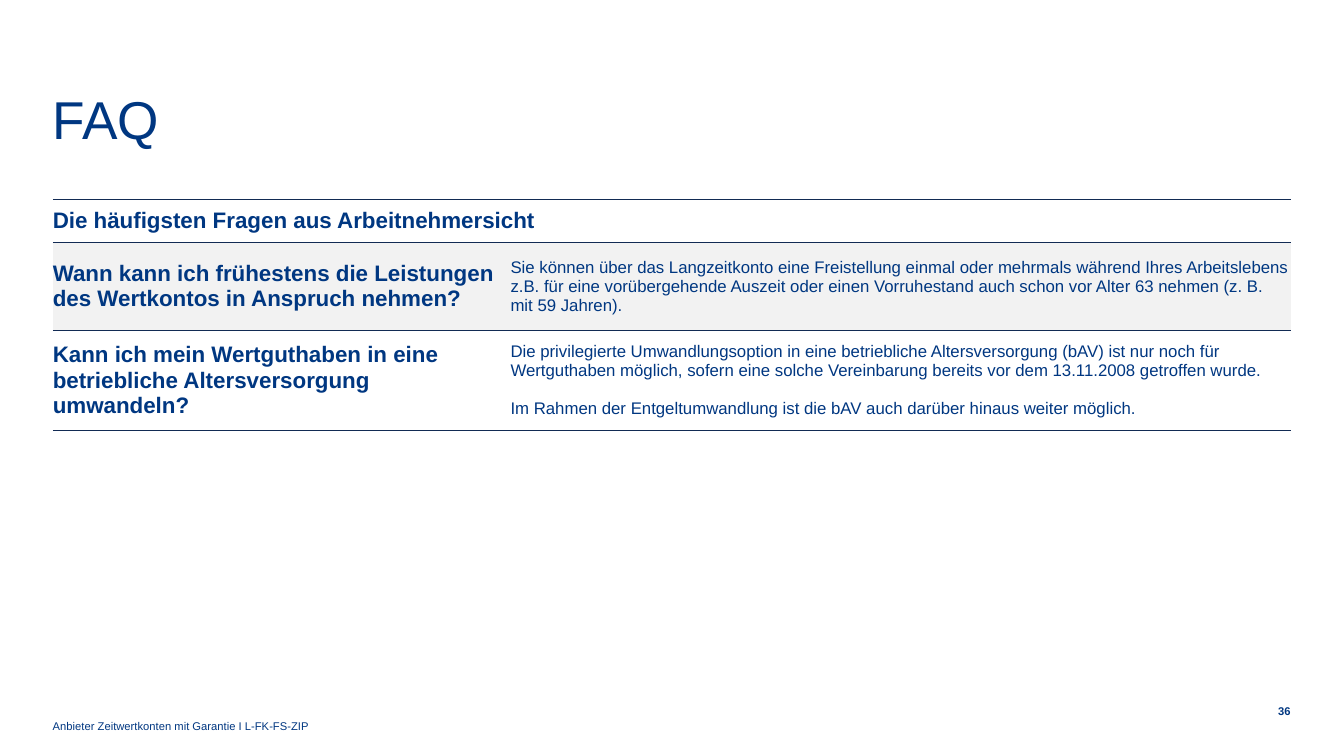
import pptx
import pptx.dml.color
import pptx.enum.text
import pptx.oxml
import pptx.oxml.ns
import pptx.util

Pt = pptx.util.Pt
Align = pptx.enum.text.PP_ALIGN
Anchor = pptx.enum.text.MSO_ANCHOR

HEADLINE = "FAQ"
TOPIC = "Die häufigsten Fragen aus Arbeitnehmersicht"
FAQS = [
    ("Wann kann ich frühestens die Leistungen des Wertkontos in Anspruch nehmen?",
     ["Sie können über das Langzeitkonto eine Freistellung einmal oder mehrmals während Ihres "
      "Arbeitslebens z.B. für eine vorübergehende Auszeit oder einen Vorruhestand auch schon "
      "vor Alter 63 nehmen (z. B. mit 59 Jahren)."]),
    ("Kann ich mein Wertguthaben in eine betriebliche Altersversorgung umwandeln?",
     ["Die privilegierte Umwandlungsoption in eine betriebliche Altersversorgung (bAV) ist nur "
      "noch für Wertguthaben möglich, sofern eine solche Vereinbarung bereits vor dem "
      "13.11.2008 getroffen wurde.",
      "Im Rahmen der Entgeltumwandlung ist die bAV auch darüber hinaus weiter möglich."]),
]
FOOTER = "Anbieter Zeitwertkonten mit Garantie I L-FK-FS-ZIP"
PAGE_NUMBER = "36"

THEME = dict(font="Arial", text="003781", rule="122B54", band="F2F2F2",
             title=38, question=16, answer=12, small=8)

LEFT, WIDTH = 37.7, 884.2
TABLE_TOP = 142.3
COLUMN_WIDTHS = [327, WIDTH - 327]
ROW_HEIGHTS = [31, 62.6, 71.4]
CELL_PADDING = 8.64
ANSWER_GAP = 13.8
RULES = [(1, 1), (1, 0.5), (0.5, 0.5)]
NO_STYLE = "{2D5ABB26-0587-4C30-8999-92F81FD0307C}"


def color(key):
    return pptx.dml.color.RGBColor.from_string(THEME[key])


def write(frame, text, size, bold=False, align=Align.LEFT, line=None, gap=0):
    paragraphs = [text] if isinstance(text, str) else text
    for index, content in enumerate(paragraphs):
        paragraph = frame.add_paragraph() if index else frame.paragraphs[0]
        paragraph.alignment = align
        if line:
            paragraph.line_spacing = line
        paragraph.space_before = Pt(gap if index else 0)
        run = paragraph.add_run()
        run.text = content
        run.font.name = THEME["font"]
        run.font.size = Pt(THEME[size])
        run.font.bold = bold
        run.font.color.rgb = color("text")


def prepare(frame, anchor):
    frame.margin_left = frame.margin_right = frame.margin_top = frame.margin_bottom = 0
    frame.vertical_anchor = anchor
    frame.word_wrap = True
    frame.auto_size = pptx.enum.text.MSO_AUTO_SIZE.NONE
    return frame


def add_label(left, top, width, height, anchor, text, **style):
    label = slide.shapes.add_textbox(Pt(left), Pt(top), Pt(width), Pt(height))
    write(prepare(label.text_frame, anchor), text, "small", **style)


def set_borders(cell, top, bottom):
    properties = cell._tc.get_or_add_tcPr()
    edges = [("lnL", 0), ("lnR", 0), ("lnT", top), ("lnB", bottom)]
    for index, (tag, width) in enumerate(edges):
        paint = f'<a:solidFill><a:srgbClr val="{THEME["rule"]}"/></a:solidFill>' if width else "<a:noFill/>"
        properties.insert(index, pptx.oxml.parse_xml(
            f'<a:{tag} {pptx.oxml.ns.nsdecls("a")} w="{int(Pt(width))}">{paint}</a:{tag}>'))


deck = pptx.Presentation()
deck.slide_width, deck.slide_height = Pt(960), Pt(540)
slide = deck.slides.add_slide(deck.slide_layouts[5])

headline = slide.shapes.title
headline.left, headline.top, headline.width, headline.height = Pt(LEFT), Pt(69), Pt(734.4), Pt(73.4)
write(prepare(headline.text_frame, Anchor.TOP), HEADLINE, "title", line=Pt(38))

faq_frame = slide.shapes.add_table(len(FAQS) + 1, 2, Pt(LEFT), Pt(TABLE_TOP),
                                   Pt(WIDTH), Pt(sum(ROW_HEIGHTS)))
faq = faq_frame.table
faq.first_row = faq.horz_banding = False
faq._tbl.tblPr.find(pptx.oxml.ns.qn("a:tableStyleId")).text = NO_STYLE
for column, width in zip(faq.columns, COLUMN_WIDTHS):
    column.width = Pt(width)
for index, (row, height) in enumerate(zip(faq.rows, ROW_HEIGHTS)):
    row.height = Pt(height)
    for cell in row.cells:
        cell.margin_left = cell.margin_right = 0
        cell.margin_top = cell.margin_bottom = Pt(CELL_PADDING if index else 0)
        cell.vertical_anchor = Anchor.MIDDLE
        if index % 2:
            cell.fill.solid()
            cell.fill.fore_color.rgb = color("band")
        else:
            cell.fill.background()
        set_borders(cell, *RULES[index])

faq.cell(0, 0).merge(faq.cell(0, 1))
write(faq.cell(0, 0).text_frame, TOPIC, "question", bold=True, line=Pt(18))
for index, (question, answer) in enumerate(FAQS, start=1):
    write(faq.cell(index, 0).text_frame, question, "question", bold=True, line=Pt(18))
    write(faq.cell(index, 1).text_frame, answer, "answer", gap=ANSWER_GAP)

add_label(LEFT + WIDTH - 21, 501.8, 21, 11.5, Anchor.MIDDLE, PAGE_NUMBER,
          bold=True, align=Align.RIGHT, line=Pt(10))
add_label(LEFT, 496, 734.4, 27.4, Anchor.BOTTOM, FOOTER, line=0.9)

deck.save("out.pptx")
